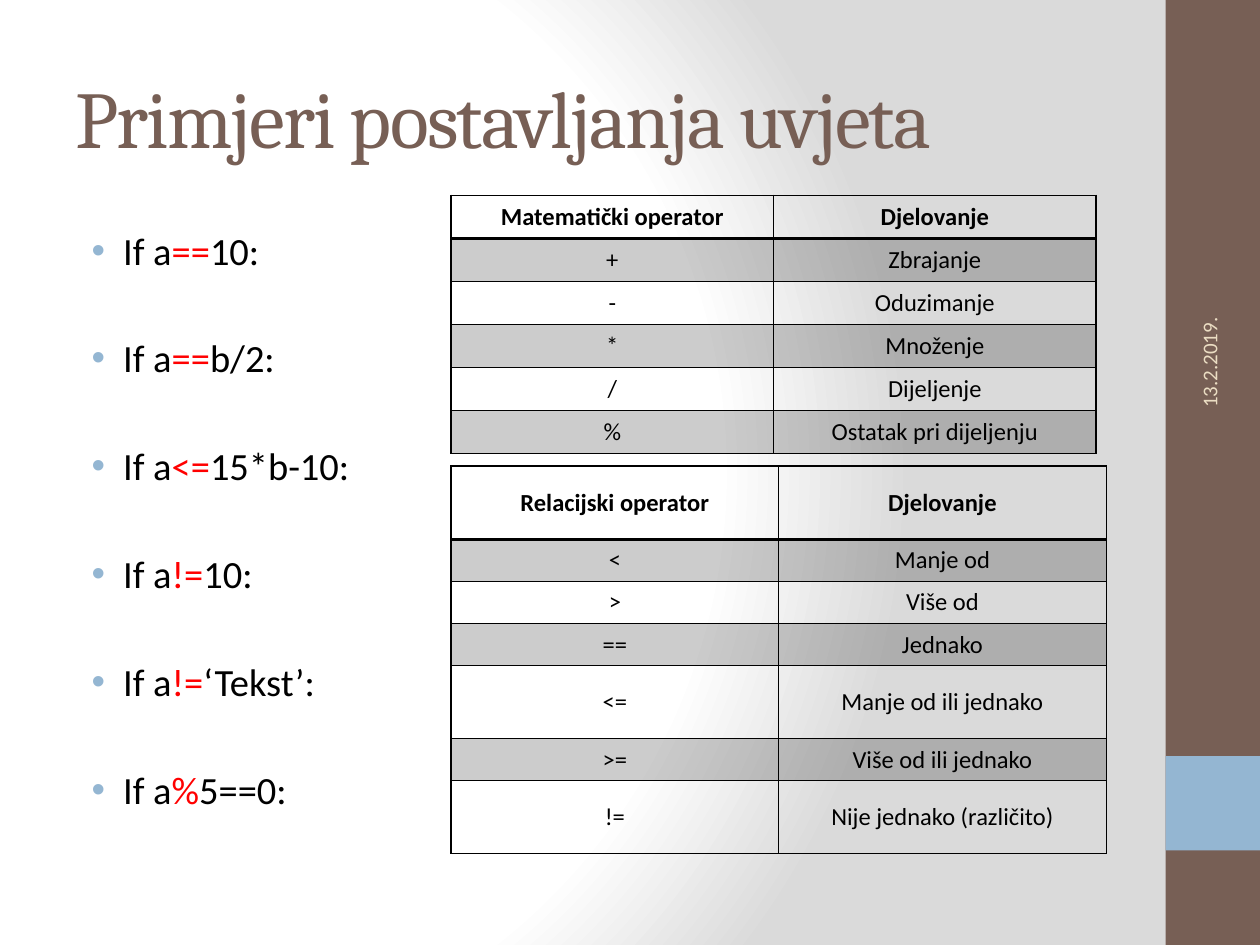
from lxml import etree
from pptx import Presentation
from pptx import util as u
from pptx.dml.color import RGBColor
from pptx.enum import shapes, text
from pptx.oxml import parse_xml
from pptx.oxml.ns import nsdecls, qn

BROWN = RGBColor(0x77, 0x5F, 0x55)
BLUE = RGBColor(0x94, 0xB6, 0xD2)
SAND = RGBColor(0xEB, 0xDD, 0xC3)
BLACK = RGBColor(0, 0, 0)
RED = RGBColor(0xFF, 0, 0)
WHITE = RGBColor(0xFF, 0xFF, 0xFF)
GREY = RGBColor(0xDA, 0xDA, 0xDA)

TITLE = {"name": "Cambria", "size": u.Pt(46)}
BODY = {"name": "Calibri", "size": u.Pt(22)}
DATE = {"name": "Calibri", "size": u.Pt(12)}
HEAD = {"name": "Calibri", "size": u.Pt(14), "bold": True}
CELL = {**HEAD, "bold": False}

TESTS = [
    ("If a", "==", "10:"),
    ("If a", "==", "b/2:"),
    ("If a", "<=", "15*b-10:"),
    ("If a", "!=", "10:"),
    ("If a", "!=", "‘Tekst’:"),
    ("If a", "%", "5==0:"),
]
MATH = [
    ("Matematički operator", "Djelovanje"),
    ("+", "Zbrajanje"),
    ("-", "Oduzimanje"),
    ("*", "Množenje"),
    ("/", "Dijeljenje"),
    ("%", "Ostatak pri dijeljenju"),
]
RELATIONS = [
    ("Relacijski operator", "Djelovanje"),
    ("<", "Manje od"),
    (">", "Više od"),
    ("==", "Jednako"),
    ("<=", "Manje od ili jednako"),
    (">=", "Više od ili jednako"),
    ("!=", "Nije jednako (različito)"),
]


def paint(slide):
    """Give the slide its radial gradient background."""
    slide.background.fill.gradient()
    grad = slide._element.find(".//" + qn("a:gradFill"))
    for part in list(grad):
        grad.remove(part)
    stops = "".join(
        f'<a:gs pos="{pos * 1000}"><a:srgbClr val="{color}"/></a:gs>'
        for pos, color in ((0, WHITE), (75, WHITE), (100, GREY))
    )
    grad.append(parse_xml(f'<a:gsLst {nsdecls("a")}>{stops}</a:gsLst>'))
    grad.append(parse_xml(
        f'<a:path {nsdecls("a")} path="circle">'
        '<a:fillToRect l="20000" t="50000" r="100000" b="50000"/></a:path>'
    ))


def add_bar(slide, top, height, color):
    """Add a plain block to the right-hand strip."""
    bar = slide.shapes.add_shape(
        shapes.MSO_SHAPE.RECTANGLE,
        *map(u.Inches, (9.25, top, 0.75, height)),
    )
    bar.shadow.inherit = False
    bar.fill.solid()
    bar.fill.fore_color.rgb = color
    bar.line.fill.background()


def add_run(para, words, style, color):
    """Add a styled run to a paragraph."""
    run = para.add_run()
    run.text = words
    for key, value in style.items():
        setattr(run.font, key, value)
    run.font.color.rgb = color
    return run


def add_box(slide, box, anchor):
    """Add a wrapping text box."""
    shape = slide.shapes.add_textbox(*map(u.Inches, box))
    shape.text_frame.word_wrap = True
    shape.text_frame.vertical_anchor = anchor
    return shape


def add_label(slide, box, words, style, color):
    """Add a one-line text box centred vertically."""
    shape = add_box(slide, box, text.MSO_ANCHOR.MIDDLE)
    run = add_run(shape.text_frame.paragraphs[0], words, style, color)
    return shape, run


def add_list(slide, box, items):
    """Add a bulleted list with the operators in red."""
    frame = add_box(slide, box, text.MSO_ANCHOR.TOP).text_frame
    for i, parts in enumerate(items):
        para = frame.add_paragraph() if i else frame.paragraphs[0]
        para.space_after = u.Pt(35.2)
        props = para._p.get_or_add_pPr()
        props.set("marL", str(u.Inches(0.38)))
        props.set("indent", str(u.Inches(-0.25)))
        tint = etree.SubElement(props, qn("a:buClr"))
        etree.SubElement(tint, qn("a:srgbClr"), val=str(BLUE))
        etree.SubElement(props, qn("a:buFont"), typeface="Arial")
        etree.SubElement(props, qn("a:buChar"), char="•")
        for words, color in zip(parts, (BLACK, RED, BLACK)):
            add_run(para, words, BODY, color)


def add_edges(cell, widths):
    """Draw the left, right, top and bottom cell borders."""
    props = cell._tc.get_or_add_tcPr()
    for side, width in zip("LRTB", widths):
        line = etree.SubElement(props, qn(f"a:ln{side}"), w=str(u.Pt(width)))
        fill = etree.SubElement(line, qn("a:solidFill"))
        etree.SubElement(fill, qn("a:srgbClr"), val=str(BLACK))


def shade(cell):
    """Fill a cell with black at 20% opacity."""
    cell.fill.solid()
    cell.fill.fore_color.rgb = BLACK
    fill = cell._tc.tcPr.find(qn("a:solidFill"))
    etree.SubElement(fill.find(qn("a:srgbClr")), qn("a:alpha"), val="20000")


def add_grid(slide, top, width, heights, rows):
    """Add a two-column operator table with banded rows."""
    box = map(u.Inches, (3.58, top, width, sum(heights)))
    table = slide.shapes.add_table(len(rows), 2, *box).table
    table.first_row = table.horz_banding = False
    for r, (height, row) in enumerate(zip(heights, rows)):
        table.rows[r].height = u.Inches(height)
        for c, words in enumerate(row):
            cell = table.cell(r, c)
            cell.vertical_anchor = text.MSO_ANCHOR.MIDDLE
            add_edges(cell, (1, 1, 2 if r == 1 else 1, 1 if r else 2))
            if r % 2:
                shade(cell)
            else:
                cell.fill.background()
            para = cell.text_frame.paragraphs[0]
            para.alignment = text.PP_ALIGN.CENTER
            add_run(para, words, CELL if r else HEAD, BLACK)


def main():
    """Build the slide and save it."""
    deck = Presentation()
    deck.slide_width, deck.slide_height = u.Inches(10), u.Inches(7.5)
    slide = deck.slides.add_slide(deck.slide_layouts[6])
    paint(slide)
    add_bar(slide, 0, 7.5, BROWN)
    add_bar(slide, 6, 0.75, BLUE)
    _, run = add_label(slide, (0.5, 0.3, 8.33, 1.25),
                       "Primjeri postavljanja uvjeta", TITLE, BROWN)
    run._r.get_or_add_rPr().set("spc", "-100")
    add_list(slide, (0.5, 1.75, 8.33, 5.25), TESTS)
    date, _ = add_label(slide, (8.26, 1.8, 2.67, 0.4),
                        "13.2.2019.", DATE, SAND)
    date.rotation = 270
    add_grid(slide, 1.55, 5.12, [2.05 / len(MATH)] * len(MATH), MATH)
    tall, low = 0.58, 0.33
    add_grid(slide, 3.7, 5.2, [tall, low, low, low, tall, low, tall], RELATIONS)
    deck.save("out.pptx")


if __name__ == "__main__":
    main()
